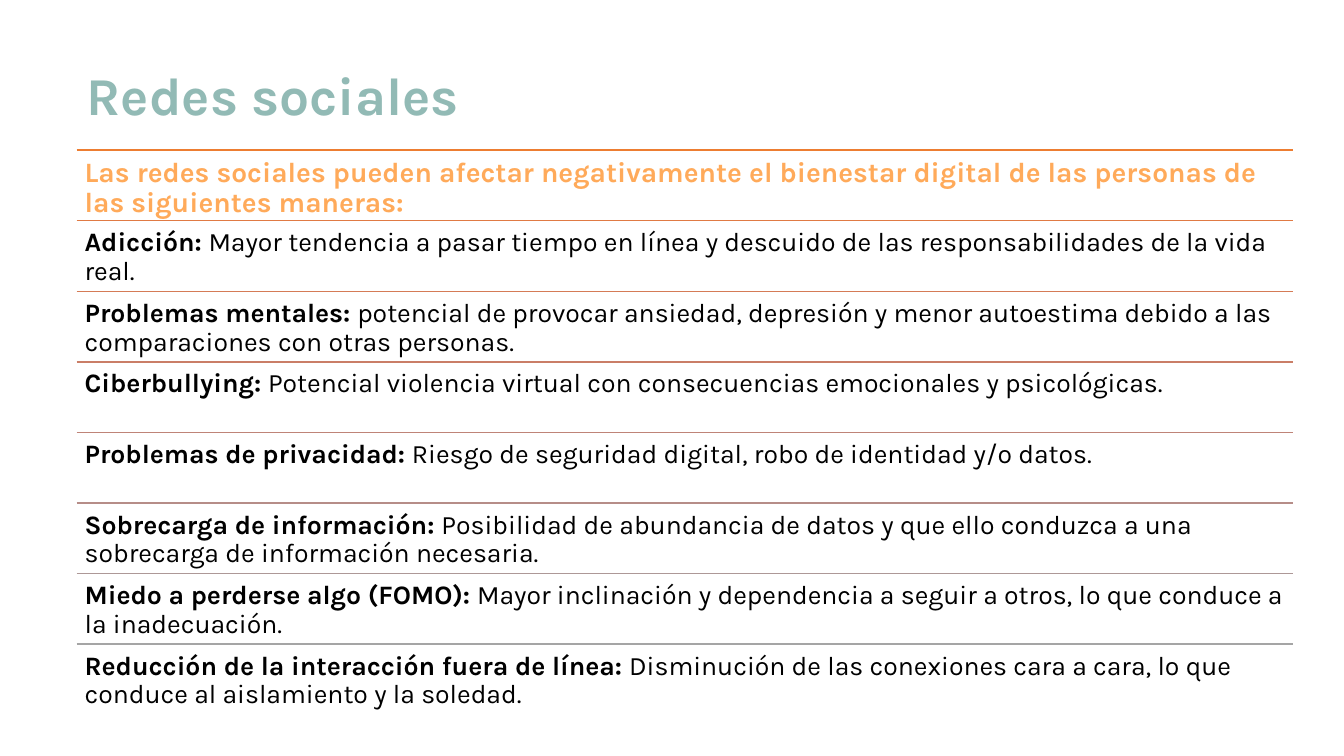
from dataclasses import dataclass

from lxml.etree import SubElement
from pptx import Presentation
from pptx.dml.color import RGBColor
from pptx.enum.shapes import MSO_CONNECTOR
from pptx.enum.text import MSO_ANCHOR, MSO_AUTO_SIZE, PP_ALIGN
from pptx.oxml.ns import qn
from pptx.util import Inches, Pt

TITLE = "Redes sociales"
INTRO = ("Las redes sociales pueden afectar negativamente el bienestar digital "
         "de las personas de las siguientes maneras:")
EFFECTS = [
    ("Adicción: ", "Mayor tendencia a pasar tiempo en línea y descuido de las "
     "responsabilidades de la vida real."),
    ("Problemas mentales: ", "potencial de provocar ansiedad, depresión y menor "
     "autoestima debido a las comparaciones con otras personas."),
    ("Ciberbullying: ", "Potencial violencia virtual con consecuencias emocionales "
     "y psicológicas."),
    ("Problemas de privacidad: ", "Riesgo de seguridad digital, robo de identidad "
     "y/o datos."),
    ("Sobrecarga de información: ", "Posibilidad de abundancia de datos y que ello "
     "conduzca a una sobrecarga de información necesaria."),
    ("Miedo a perderse algo (FOMO): ", "Mayor inclinación y dependencia a seguir a "
     "otros, lo que conduce a la inadecuación."),
    ("Reducción de la interacción fuera de línea: ", "Disminución de las conexiones "
     "cara a cara, lo que conduce al aislamiento y la soledad."),
]


@dataclass(frozen=True)
class Theme:
    font: str = "Karla"
    title_size: int = 38
    intro_size: int = 20
    effect_size: int = 19
    title: str = "92BAB5"
    intro: str = "FFAA5A"
    text: str = "000000"
    rules: tuple = ("ED7D31", "E07A44", "D57B56", "CA7E67",
                    "BF8478", "B68D88", "AD9897", "A5A5A5")


THEME = Theme()
LEFT, TOP, WIDTH, ROW_HEIGHT = 0.76, 1.49, 12.06, 0.7
PADDING = Inches(0.08)


def format_run(run, size, color, bold):
    run.font.name = THEME.font
    run.font.size = Pt(size)
    run.font.bold = bold
    run.font.color.rgb = RGBColor.from_string(color)


def add_title(slide):
    title = slide.shapes.title
    title.left, title.top = Inches(LEFT), Inches(0.4)
    title.width, title.height = Inches(12.29), Inches(1.16)
    frame = title.text_frame
    frame.text = TITLE
    frame.vertical_anchor = MSO_ANCHOR.MIDDLE
    frame.auto_size = MSO_AUTO_SIZE.NONE
    paragraph = frame.paragraphs[0]
    paragraph.alignment = PP_ALIGN.LEFT
    paragraph.line_spacing = 0.9
    paragraph.space_after = Pt(6)
    format_run(paragraph.runs[0], THEME.title_size, THEME.title, True)


def add_rule(shapes, top, color):
    rule = shapes.add_connector(MSO_CONNECTOR.STRAIGHT, Inches(LEFT), Inches(top),
                                Inches(LEFT + WIDTH), Inches(top))
    rule.line.color.rgb = RGBColor.from_string(color)
    rule.line.width = Pt(1)
    SubElement(rule._element.spPr, qn("a:effectLst"))


def add_row(shapes, top, parts, size, color):
    """Add one text row; parts holds (text, bold) pairs."""
    box = shapes.add_textbox(Inches(LEFT), Inches(top), Inches(WIDTH), Inches(ROW_HEIGHT))
    frame = box.text_frame
    frame.word_wrap = True
    frame.margin_left = frame.margin_right = PADDING
    frame.margin_top = frame.margin_bottom = PADDING
    paragraph = frame.paragraphs[0]
    paragraph.line_spacing = 0.9
    for text, bold in parts:
        run = paragraph.add_run()
        run.text = text
        format_run(run, size, color, bold)


def main():
    presentation = Presentation()
    presentation.slide_width, presentation.slide_height = Inches(13.33), Inches(7.5)
    slide = presentation.slides.add_slide(presentation.slide_layouts[5])

    rows = [([(INTRO, True)], THEME.intro_size, THEME.intro)]
    rows += [([(name, True), (detail, False)], THEME.effect_size, THEME.text)
             for name, detail in EFFECTS]
    shapes = slide.shapes.add_group_shape().shapes
    for index, (row, rule_color) in enumerate(zip(rows, THEME.rules)):
        top = TOP + index * ROW_HEIGHT
        add_rule(shapes, top, rule_color)
        add_row(shapes, top, *row)

    add_title(slide)
    presentation.save("out.pptx")


if __name__ == "__main__":
    main()
